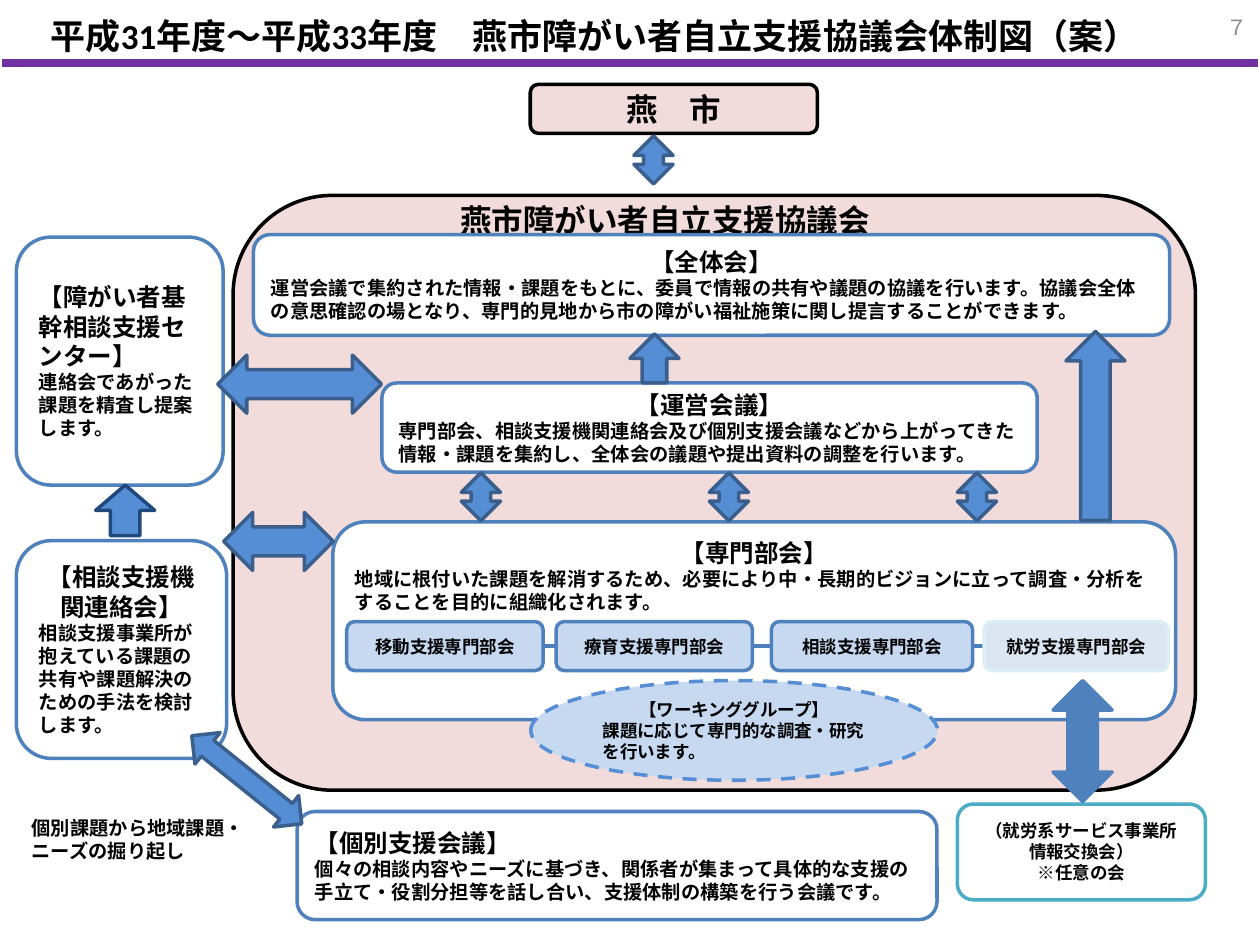
from collections import namedtuple

from lxml.etree import SubElement
from pptx import Presentation
from pptx.dml.color import RGBColor
from pptx.enum.dml import MSO_LINE
from pptx.enum.shapes import MSO_CONNECTOR, MSO_SHAPE
from pptx.enum.text import MSO_ANCHOR, PP_ALIGN
from pptx.oxml.ns import qn
from pptx.util import Cm, Pt

COLORS = {
    "black": "000000", "white": "FFFFFF", "grey": "8C8C8C", "purple": "7030A0",
    "pink": "F2DCDB", "blue": "4F81BD", "arrow": "558ED5", "arrow_edge": "3A5F8C",
    "navy": "1F497D", "link": "4B7EBC", "pale": "C6D9F1", "paler": "DCE6F2",
    "pale_edge": "DBEEF4", "teal": "4BACC6",
}
GOTHIC = "Noto Sans CJK JP"
CENTER, LEFT, RIGHT = PP_ALIGN.CENTER, PP_ALIGN.LEFT, PP_ALIGN.RIGHT
ROUND, UP, VERTICAL, HORIZONTAL = (
    MSO_SHAPE.ROUNDED_RECTANGLE, MSO_SHAPE.UP_ARROW,
    MSO_SHAPE.UP_DOWN_ARROW, MSO_SHAPE.LEFT_RIGHT_ARROW)

Box = namedtuple("Box", "left top width height")


def inside(box, left, top, width, height):
    return Box(box.left + left, box.top + top, width, height)


def color(name):
    return RGBColor.from_string(COLORS[name])


def write(shape, lines, anchor=MSO_ANCHOR.MIDDLE, font=GOTHIC, tint="black", bold=True):
    frame = shape.text_frame
    frame.word_wrap = True
    frame.vertical_anchor = anchor
    frame.text = "\n".join(text for text, size, align in lines)
    for para, (text, size, align) in zip(frame.paragraphs, lines):
        para.alignment = align
        for span in para.runs:
            span.font.size = Pt(size)
            span.font.bold = bold
            span.font.name = font
            span.font.color.rgb = color(tint)
            SubElement(span.font._element, qn("a:ea")).set("typeface", GOTHIC)


def add_panel(page, box, fill="white", edge="blue", lines=(), kind=ROUND,
              anchor=MSO_ANCHOR.MIDDLE):
    shape = page.shapes.add_shape(kind, *map(Cm, box))
    shape.shadow.inherit = False
    if fill:
        shape.fill.solid()
        shape.fill.fore_color.rgb = color(fill)
    else:
        shape.fill.background()
    if edge:
        shape.line.color.rgb = color(edge)
        shape.line.width = Pt(2)
    else:
        shape.line.fill.background()
    if lines:
        write(shape, lines, anchor)
    return shape


def add_arrow(page, box, kind=VERTICAL, fill="arrow", edge="arrow_edge"):
    return add_panel(page, box, fill, edge, kind=kind)


def add_line(page, start, end, tint, width):
    line = page.shapes.add_connector(MSO_CONNECTOR.STRAIGHT, *map(Cm, start + end))
    line.line.color.rgb = color(tint)
    line.line.width = Pt(width)
    SubElement(line._element.spPr, qn("a:effectLst"))


def add_text(page, box, lines, **style):
    write(page.shapes.add_textbox(*map(Cm, box)), lines, **style)


def described(heading, body, align=CENTER):
    return [(heading, 14, align), (body, 11, LEFT)]


def add_header(page, box):
    add_line(page, (box.left + 0.05, box.top + 1.27),
             (box.left + box.width - 0.05, box.top + 1.27), "purple", 5)
    add_text(page, inside(box, 0, -0.08, 23.98, 1.6),
             [("平成31年度～平成33年度　燕市障がい者自立支援協議会体制図（案）", 20, CENTER)],
             font="Calibri")
    add_text(page, inside(box, 19.48, 0.03, 5.92, 1.02), [("７", 12, RIGHT)],
             font="Calibri", tint="grey", bold=False)


def add_city(page, box):
    add_panel(page, box, "pink", "black", [("燕　市", 18, CENTER)])
    add_arrow(page, inside(box, 2.09, 1.04, 0.79, 0.97))


def add_specialists(page, box):
    add_panel(page, box, lines=described(
        "【専門部会】",
        "地域に根付いた課題を解消するため、必要により中・長期的ビジョンに立って調査・分析を"
        "することを目的に組織化されます。"), anchor=MSO_ANCHOR.TOP)
    add_line(page, (box.left + 4.24, box.top + 2.51),
             (box.left + 13.13, box.top + 2.51), "link", 2.25)
    subcommittees = [
        ("移動支援専門部会", 0.28, 3.96, "pale", "blue"),
        ("療育支援専門部会", 4.5, 3.96, "pale", "blue"),
        ("相談支援専門部会", 8.84, 4.06, "pale", "blue"),
        ("就労支援専門部会", 13.13, 3.71, "paler", "pale_edge"),
    ]
    for name, left, width, fill, edge in subcommittees:
        add_panel(page, inside(box, left, 2.01, width, 0.99), fill, edge,
                  [(name, 10, CENTER)])
    group = add_panel(
        page, inside(box, 3.99, 3.2, 8.2, 2.01), "pale", "arrow",
        [("【ワーキンググループ】", 10, CENTER),
         ("課題に応じて専門的な調査・研究を行います。", 10, LEFT)], MSO_SHAPE.OVAL)
    group.line.dash_style = MSO_LINE.DASH


def add_council(page, box):
    add_panel(page, box, "pink", "black")
    add_panel(page, inside(box, 2.21, 0, 13, 1), None, None,
              [("燕市障がい者自立支援協議会", 18, CENTER)])
    add_panel(page, inside(box, 0.41, 0.79, 18.47, 2.03), lines=described(
        "【全体会】",
        "運営会議で集約された情報・課題をもとに、委員で情報の共有や議題の協議を行います。"
        "協議会全体の意思確認の場となり、専門的見地から市の障がい福祉施策に関し提言することができます。"))
    add_specialists(page, inside(box, 2.01, 6.58, 16.99, 3.99))
    add_panel(page, inside(box, 3, 3.78, 13.21, 1.8), lines=described(
        "【運営会議】",
        "専門部会、相談支援機関連絡会及び個別支援会議などから上がってきた"
        "情報・課題を集約し、全体会の議題や提出資料の調整を行います。"))
    for column in range(3):
        add_arrow(page, inside(box, 4.6 + 5 * column, 5.59, 0.79, 0.97))
    add_arrow(page, inside(box, 8, 2.79, 0.99, 0.99), UP)
    add_arrow(page, inside(box, 16.79, 2.74, 1.19, 3.81), UP)


def add_consultation(page, box):
    add_panel(page, inside(box, 0, 0, 4.17, 5), lines=described(
        "【障がい者基幹相談支援センター】",
        "連絡会であがった課題を精査し提案します。", LEFT))
    add_panel(page, inside(box, 0, 6.12, 4.24, 4.39), lines=described(
        "【相談支援機関連絡会】",
        "相談支援事業所が抱えている課題の共有や課題解決のための手法を検討します。"))
    add_arrow(page, inside(box, 1.6, 5, 1.19, 1.02), UP, edge="navy")
    add_arrow(page, inside(box, 4.06, 2.38, 3.3, 1.17), HORIZONTAL)
    add_arrow(page, inside(box, 4.18, 5.55, 2.21, 1.17), HORIZONTAL)


def add_case_meeting(page, box):
    add_panel(page, inside(box, 5.66, 0.03, 12.9, 2.18), lines=described(
        "【個別支援会議】",
        "個々の相談内容やニーズに基づき、関係者が集まって具体的な支援の"
        "手立て・役割分担等を話し合い、支援体制の構築を行う会議です。", LEFT))
    add_arrow(page, inside(box, 4.24, -2.03, 0.81, 2.84)).rotation = 128.7
    add_panel(page, inside(box, 0, 0, 5, 1.19), None, None,
              [("個別課題から地域課題・ニーズの掘り起し", 11, LEFT)])


def add_employment(page, box):
    lines = ["（就労系サービス事業所", "情報交換会）", "※任意の会"]
    add_panel(page, box, edge="teal", lines=[(line, 10, CENTER) for line in lines])
    add_arrow(page, inside(box, 1.93, -2.49, 1.19, 2.44), fill="blue", edge="blue")


def main():
    deck = Presentation()
    deck.slide_width, deck.slide_height = Cm(25.4), Cm(19.05)
    page = deck.slides.add_slide(deck.slide_layouts[6])
    add_council(page, Box(4.7, 3.94, 19.4, 11.99))
    add_city(page, Box(10.69, 1.7, 5.79, 0.99))
    add_consultation(page, Box(0.33, 4.78, 7.36, 10.51))
    add_case_meeting(page, Box(0.33, 16.33, 18.56, 2.21))
    add_employment(page, Box(19.3, 16.21, 5, 1.93))
    add_header(page, Box(0, 0, 25.4, 1.6))
    deck.save("out.pptx")


if __name__ == "__main__":
    main()
